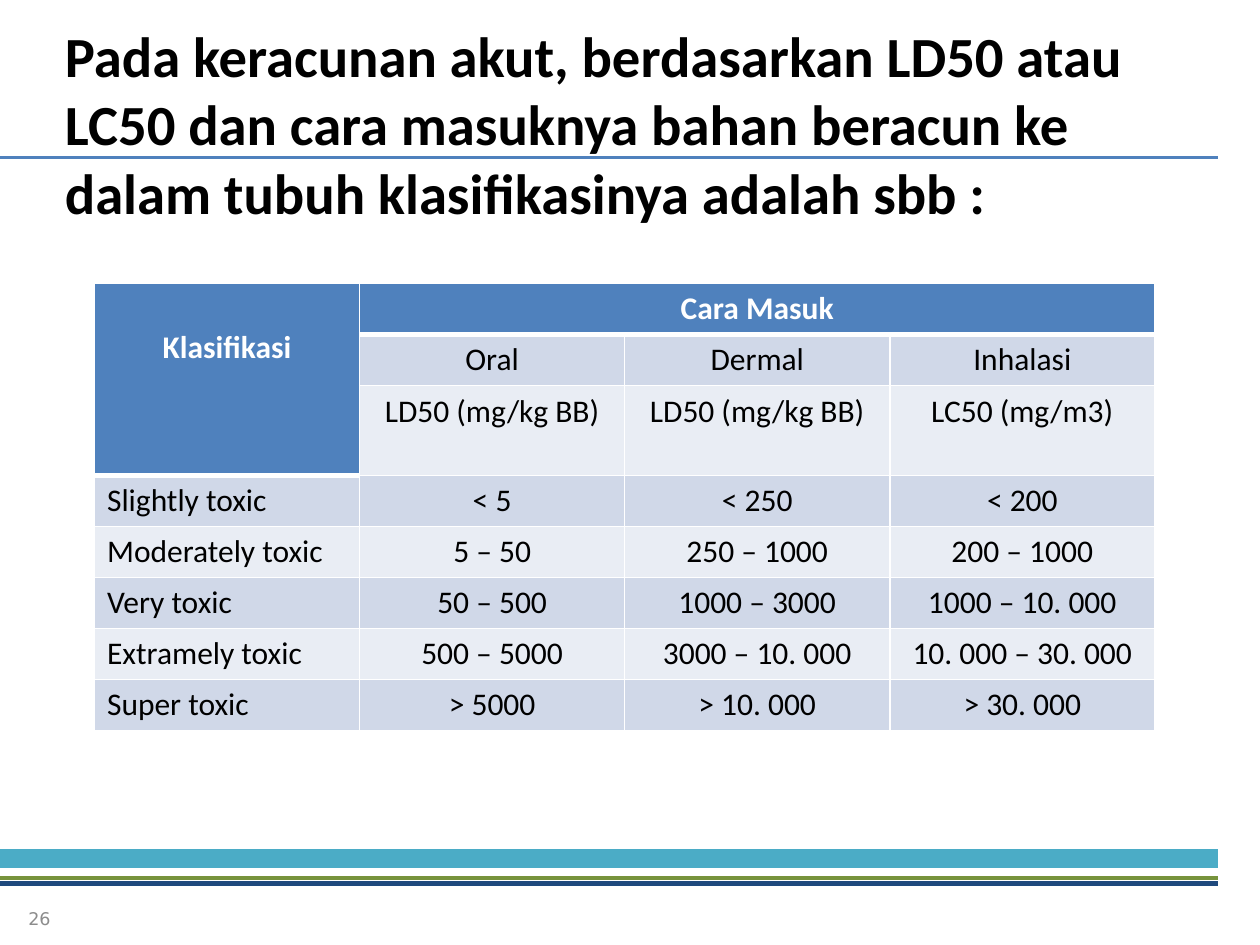
import dataclasses

import lxml.etree
import pptx
import pptx.dml.color
import pptx.enum.shapes
import pptx.enum.text
import pptx.oxml.ns
import pptx.util

Pt = pptx.util.Pt
Align = pptx.enum.text.PP_ALIGN
Anchor = pptx.enum.text.MSO_ANCHOR


@dataclasses.dataclass(frozen=True)
class Theme:
    """Colours, fonts and type sizes of the slide."""
    blue: str = "4F81BD"
    teal: str = "4BACC6"
    green: str = "77933C"
    navy: str = "1F497D"
    grey: str = "8C8C8C"
    black: str = "000000"
    white: str = "FFFFFF"
    bands: tuple = ("E9EDF4", "D0D8E8")
    font: str = "Calibri"
    number_font: str = "DejaVu Sans"
    title_size: float = 32.4
    table_size: float = 18
    number_size: float = 10


THEME = Theme()
TITLE = ("Pada keracunan akut, berdasarkan LD50 atau LC50 dan cara masuknya "
         "bahan beracun ke dalam tubuh klasifikasinya adalah sbb :")
ROWS = [
    ("Klasifikasi", "Cara Masuk", "", ""),
    ("", "Oral", "Dermal", "Inhalasi"),
    ("", "LD50 (mg/kg BB)", "LD50 (mg/kg BB)", "LC50 (mg/m3)"),
    ("Slightly toxic", "< 5", "< 250", "< 200"),
    ("Moderately toxic", "5 – 50", "250 – 1000", "200 – 1000"),
    ("Very toxic", "50 – 500", "1000 – 3000", "1000 – 10. 000"),
    ("Extramely toxic", "500 – 5000", "3000 – 10. 000", "10. 000 – 30. 000"),
    ("Super toxic", "> 5000", "> 10. 000", "> 30. 000"),
]
UNIT_ROW = 2
LINE_HEIGHT = 22


def rgb(color):
    """Return a colour object for a hex string."""
    return pptx.dml.color.RGBColor.from_string(color)


def style_paragraph(paragraph, font, size, color, bold=False, align=Align.LEFT):
    """Set the font and alignment of a paragraph."""
    paragraph.alignment = align
    paragraph.font.name = font
    paragraph.font.size = Pt(size)
    paragraph.font.bold = bold
    paragraph.font.color.rgb = rgb(color)


def add_rule(slide, left, top, width, color, weight):
    """Draw a horizontal rule."""
    connector = slide.shapes.add_connector(
        pptx.enum.shapes.MSO_CONNECTOR.STRAIGHT,
        Pt(left), Pt(top), Pt(left + width), Pt(top))
    connector.line.color.rgb = rgb(color)
    connector.line.width = Pt(weight)
    properties = connector.element.spPr
    lxml.etree.SubElement(properties, pptx.oxml.ns.qn("a:effectLst"))


def add_text(slide, box, text):
    """Add a wrapping, vertically centred text box."""
    shape = slide.shapes.add_textbox(*map(Pt, box))
    frame = shape.text_frame
    frame.word_wrap = True
    frame.vertical_anchor = Anchor.MIDDLE
    frame.text = text
    return frame


def add_title(slide, box):
    """Place the title, raised by a deep bottom margin, over its rule."""
    left, top, width, height = box
    add_rule(slide, 0, top + 36, 696, THEME.blue, 2.25)
    frame = add_text(slide, box, TITLE)
    frame.margin_bottom = Pt(39)
    style_paragraph(frame.paragraphs[0], THEME.font, THEME.title_size,
                    THEME.black, bold=True)


def add_footer(slide, box):
    """Place the three footer rules and the slide number."""
    left, top, width, height = box
    for offset, color, weight in ((0, THEME.teal, 11), (11, THEME.green, 2.25),
                                  (14.5, THEME.navy, 3)):
        add_rule(slide, left, top + offset, width, color, weight)
    frame = add_text(slide, (left, top + 20, 36, height - 20), "26")
    style_paragraph(frame.paragraphs[0], THEME.number_font, THEME.number_size,
                    THEME.grey, align=Align.RIGHT)


def set_borders(cell, top, bottom):
    """Give a cell white borders, with their own top and bottom widths."""
    properties = cell._tc.get_or_add_tcPr()
    for side, weight in (("L", 1), ("R", 1), ("T", top), ("B", bottom)):
        line = lxml.etree.SubElement(
            properties, pptx.oxml.ns.qn(f"a:ln{side}"), w=str(Pt(weight)))
        fill = lxml.etree.SubElement(line, pptx.oxml.ns.qn("a:solidFill"))
        lxml.etree.SubElement(fill, pptx.oxml.ns.qn("a:srgbClr"), val=THEME.white)


def add_toxicity_table(slide, box):
    """Place the toxicity table with its merged headings."""
    left, top, width, height = box
    columns = len(ROWS[0])
    row_height = (height - LINE_HEIGHT) / len(ROWS)
    table = slide.shapes.add_table(len(ROWS), columns, *map(Pt, box)).table
    for column in table.columns:
        column.width = Pt(width / columns)
    for row_index, texts in enumerate(ROWS):
        extra = LINE_HEIGHT if row_index == UNIT_ROW else 0
        table.rows[row_index].height = Pt(row_height + extra)
        for column_index, text in enumerate(texts):
            cell = table.cell(row_index, column_index)
            header_depth = UNIT_ROW + 1 if column_index == 0 else 1
            is_header = row_index < header_depth
            set_borders(cell, 3 if row_index == header_depth else 1,
                        3 if is_header else 1)
            cell.fill.solid()
            cell.fill.fore_color.rgb = rgb(
                THEME.blue if is_header else THEME.bands[row_index % 2])
            cell.text = text
            centred = is_header or column_index > 0
            style_paragraph(cell.text_frame.paragraphs[0], THEME.font,
                            THEME.table_size,
                            THEME.white if is_header else THEME.black,
                            bold=is_header,
                            align=Align.CENTER if centred else Align.LEFT)
    table.cell(0, 0).margin_top = Pt(3.6 + LINE_HEIGHT)
    table.cell(0, 0).merge(table.cell(UNIT_ROW, 0))
    table.cell(0, 1).merge(table.cell(0, columns - 1))


def main():
    """Build and save the slide."""
    presentation = pptx.Presentation()
    presentation.slide_width = Pt(720)
    presentation.slide_height = Pt(540)
    slide = presentation.slides.add_slide(presentation.slide_layouts[6])
    add_footer(slide, (0, 490.5, 696, 48.5))
    add_title(slide, (30, 54, 660, 68.4))
    add_toxicity_table(slide, (54, 162, 606, 255.6))
    presentation.save("out.pptx")


if __name__ == "__main__":
    main()
